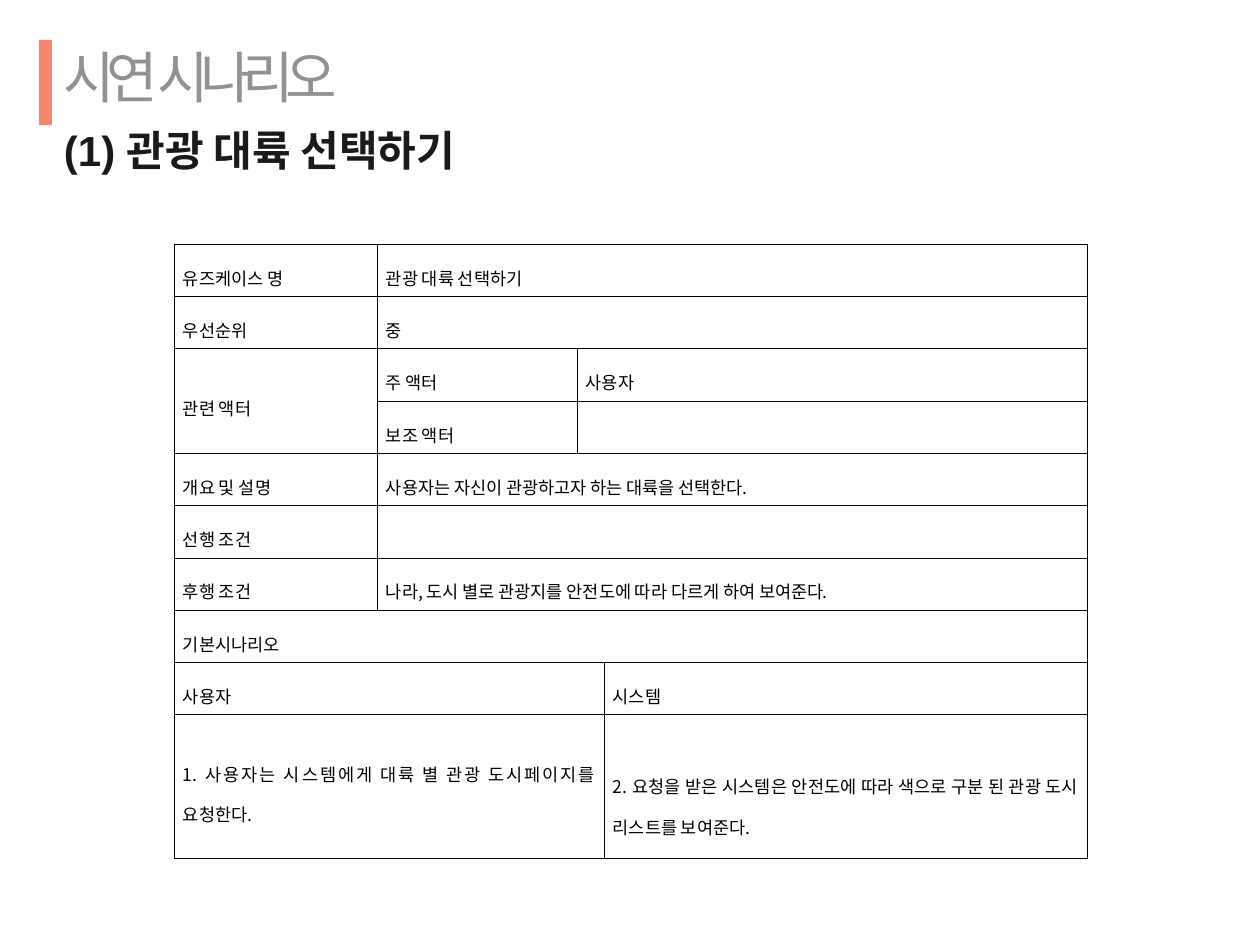
from lxml import etree
from pptx import Presentation
from pptx import util as u
from pptx.dml.color import RGBColor
from pptx.enum import shapes, text
from pptx.oxml.ns import qn

PX = u.Inches(1) / 126
KOREAN = "Noto Sans CJK KR"


def px(count):
    return u.Emu(round(count * PX))


def write(para, words, size=10, color="000000", font=KOREAN, asian=None,
          bold=False, spacing=0, line=1.6, align=text.PP_ALIGN.LEFT):
    para.alignment = align
    para.line_spacing = line
    span = para.add_run()
    span.text = words
    span.font.size = u.Pt(size)
    span.font.bold = bold
    span.font.name = font
    span.font.color.rgb = RGBColor.from_string(color)
    props = span.font._element
    props.set("spc", str(spacing * 100))
    if asian:
        etree.SubElement(props, qn("a:ea")).set("typeface", asian)


deck = Presentation()
deck.slide_width, deck.slide_height = px(1260), px(945)
page = deck.slides.add_slide(deck.slide_layouts[6])

# Accent bar
bar = page.shapes.add_shape(shapes.MSO_SHAPE.RECTANGLE, px(39), px(40), px(13), px(85))
bar.shadow.inherit = False
bar.fill.solid()
bar.fill.fore_color.rgb = RGBColor.from_string("F58670")
bar.line.fill.background()

# Heading and subheading
box = page.shapes.add_textbox(px(63), px(45), px(828), px(197))
frame = box.text_frame
frame.word_wrap = True
frame.margin_left = frame.margin_right = frame.margin_top = frame.margin_bottom = 0
write(frame.paragraphs[0], "시연  시나리오", size=32, color="939292", font="Arial",
      spacing=-5, line=u.Pt(37))
write(frame.add_paragraph(), "(1) 관광 대륙 선택하기", size=24, color="1A1A1A",
      font="Arial", asian=KOREAN, bold=True, line=u.Pt(37))
for para in frame.paragraphs:
    para._p.get_or_add_pPr().set("marL", str(px(1)))

# Use case table: each row lists (text, columns spanned)
rows = [
    [("유즈케이스 명", 1), ("관광 대륙 선택하기", 3)],
    [("우선순위", 1), ("중", 3)],
    [("관련 액터", 1), ("주 액터", 1), ("사용자", 2)],
    [("", 1), ("보조 액터", 1), ("", 2)],
    [("개요 및 설명", 1), ("사용자는 자신이 관광하고자 하는 대륙을 선택한다.", 3)],
    [("선행 조건", 1), ("", 3)],
    [("후행 조건", 1), ("나라, 도시 별로 관광지를 안전도에 따라 다르게 하여 보여준다. ", 3)],
    [("기본시나리오", 4)],
    [("사용자", 3), ("시스템", 1)],
    [("1. 사용자는 시스템에게 대륙 별 관광 도시페이지를 요청한다. ", 3),
     ("2. 요청을 받은 시스템은 안전도에 따라 색으로 구분 된 관광 도시 리스트를 보여준다.", 1)],
]
widths = [203, 200, 27, 483]
grid = page.shapes.add_table(len(rows), len(widths), px(174), px(244),
                             px(sum(widths)), px(615))
table = grid.table
table.first_row = table.horz_banding = False
for column, width in zip(table.columns, widths):
    column.width = px(width)
for row in table.rows:
    row.height = px(471 / 9)
table.rows[9].height = px(144)

# Cell borders, fill and margins
for cell in table.iter_cells():
    props = cell._tc.get_or_add_tcPr()
    for side in ("lnL", "lnR", "lnT", "lnB"):
        border = etree.SubElement(props, qn(f"a:{side}"), w=str(u.Pt(0.28)))
        paint = etree.SubElement(border, qn("a:solidFill"))
        etree.SubElement(paint, qn("a:srgbClr"), val="000000")
    cell.fill.background()
    cell.vertical_anchor = text.MSO_ANCHOR.MIDDLE
    cell.margin_left = cell.margin_right = px(9)
    cell.margin_top = cell.margin_bottom = px(3)

# Cell text and merges
for row_index, row in enumerate(rows):
    column_index = 0
    for words, columns in row:
        cell = table.cell(row_index, column_index)
        if columns > 1:
            cell.merge(table.cell(row_index, column_index + columns - 1))
        if words:
            write(cell.text_frame.paragraphs[0], words, asian=KOREAN,
                  align=text.PP_ALIGN.JUSTIFY)
        column_index += columns
table.cell(2, 0).merge(table.cell(3, 0))
table.cell(9, 3).margin_top = px(28)

deck.save("out.pptx")
